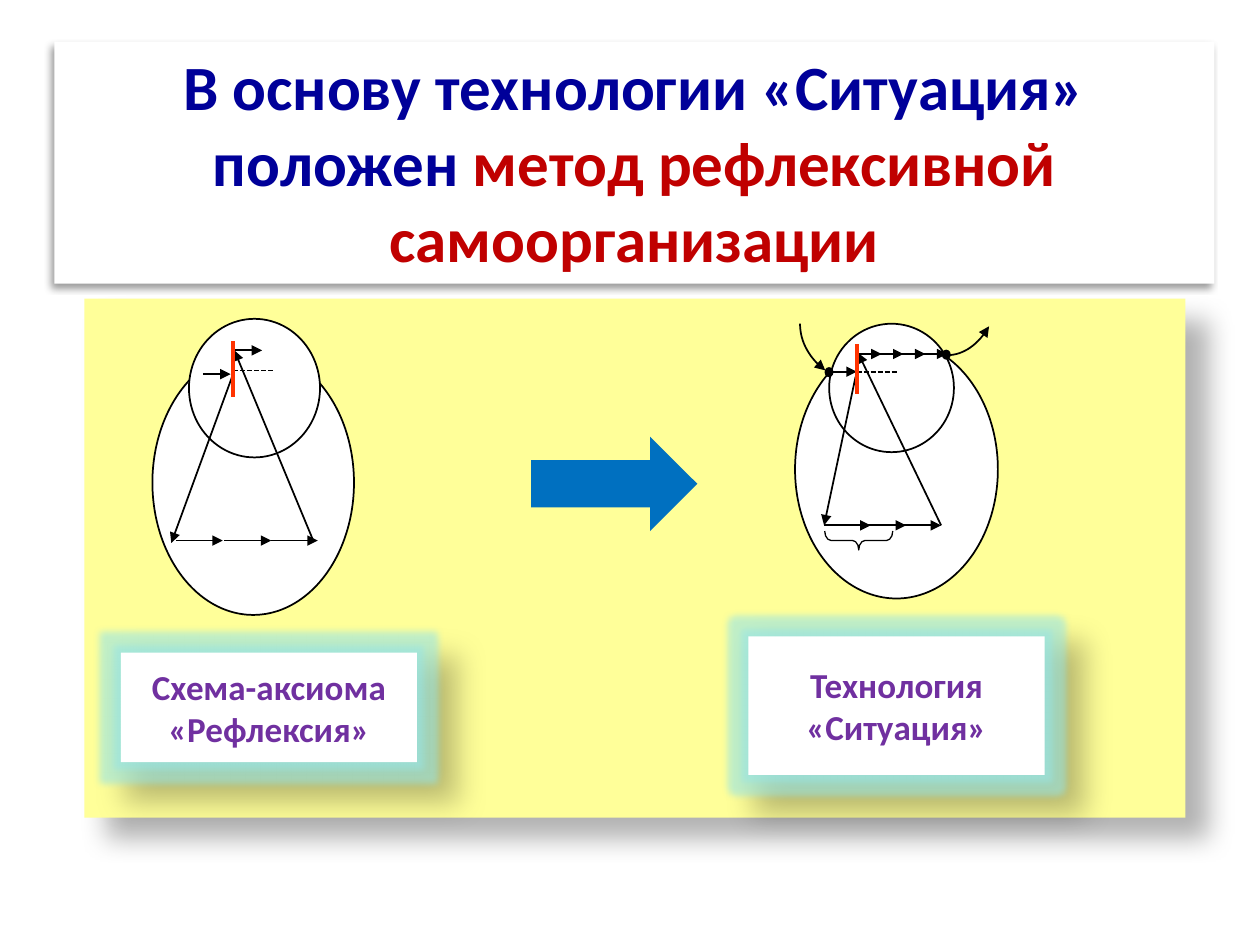
from lxml.etree import SubElement
from pptx import Presentation
from pptx.dml.color import RGBColor
from pptx.enum.dml import MSO_LINE
from pptx.enum.shapes import MSO_CONNECTOR, MSO_SHAPE
from pptx.enum.text import MSO_ANCHOR, MSO_AUTO_SIZE, PP_ALIGN
from pptx.oxml.ns import qn
from pptx.util import Pt

FONT = "Calibri"
BLACK = RGBColor(0x00, 0x00, 0x00)
WHITE = RGBColor(0xFF, 0xFF, 0xFF)
YELLOW = RGBColor(0xFF, 0xFF, 0x99)
BLUE = RGBColor(0x00, 0x70, 0xC0)
NAVY = RGBColor(0x00, 0x00, 0x99)
RED = RGBColor(0xC0, 0x00, 0x00)
ORANGE = RGBColor(0xFF, 0x33, 0x00)
PURPLE = RGBColor(0x70, 0x30, 0xA0)
GLOW = RGBColor(0x99, 0xE6, 0xE6)


def add_effect(sp, tag, color, alpha, **attrs):
    effects = sp._element.spPr.find(qn("a:effectLst"))
    effect = SubElement(effects, qn(tag), {k: str(v) for k, v in attrs.items()})
    clr = SubElement(effect, qn("a:srgbClr"), val=str(color))
    SubElement(clr, qn("a:alpha"), val=str(alpha * 1000))


def add_shadow(sp, alpha=30, blur=15, dist=18, angle=45):
    add_effect(sp, "a:outerShdw", BLACK, alpha, blurRad=Pt(blur), dist=Pt(dist),
               dir=angle * 60000, algn="ctr", rotWithShape=0)


def add_shape(shapes, kind, x, y, w, h, fill, line_width=None):
    sp = shapes.add_shape(kind, Pt(x), Pt(y), Pt(w), Pt(h))
    sp.shadow.inherit = False
    sp.fill.solid()
    sp.fill.fore_color.rgb = fill
    if line_width is None:
        sp.line.fill.background()
    else:
        sp.line.color.rgb = BLACK
        sp.line.width = Pt(line_width)
    return sp


def add_ellipse(shapes, x, y, w, h, fill=WHITE, line_width=1):
    return add_shape(shapes, MSO_SHAPE.OVAL, x, y, w, h, fill, line_width)


def add_arrowhead(line):
    SubElement(line._get_or_add_ln(), qn("a:tailEnd"), type="triangle")


def add_line(shapes, x1, y1, x2, y2, color=BLACK, width=1, dash=None):
    cn = shapes.add_connector(MSO_CONNECTOR.STRAIGHT, Pt(x1), Pt(y1), Pt(x2), Pt(y2))
    cn.line.color.rgb = color
    cn.line.width = Pt(width)
    if dash:
        cn.line.dash_style = dash
    SubElement(cn._element.spPr, qn("a:effectLst"))
    return cn


def add_arrow(shapes, x1, y1, x2, y2):
    add_arrowhead(add_line(shapes, x1, y1, x2, y2).line)


def add_curved_arrow(shapes, *controls, steps=16):
    """Draw an arrow along the cubic Bezier curve with four control points."""
    points = []
    for i in range(steps + 1):
        t = i / steps
        weights = ((1 - t) ** 3, 3 * t * (1 - t) ** 2, 3 * t * t * (1 - t), t ** 3)
        points.append(tuple(Pt(sum(w * c[axis] for w, c in zip(weights, controls)))
                            for axis in (0, 1)))
    builder = shapes.build_freeform(*points[0])
    builder.add_line_segments(points[1:], close=False)
    sp = builder.convert_to_shape()
    sp.shadow.inherit = False
    sp.fill.background()
    sp.line.color.rgb = BLACK
    sp.line.width = Pt(1)
    add_arrowhead(sp.line)


def add_barrier(shapes, x, top, bottom, dash_y, dash_length):
    """Draw the thick vertical bar and the dashed line that leaves it."""
    add_line(shapes, x, dash_y, x + dash_length, dash_y, dash=MSO_LINE.SQUARE_DOT)
    add_line(shapes, x, top, x, bottom, ORANGE, 2.25)


def format_run(r, size, color):
    r.font.name = FONT
    r.font.size = Pt(size)
    r.font.bold = True
    r.font.color.rgb = color


def add_title(slide):
    sp = slide.shapes.title
    sp.left, sp.top, sp.width, sp.height = Pt(31), Pt(23.8), Pt(663), Pt(138.2)
    sp.fill.solid()
    sp.fill.fore_color.rgb = WHITE
    sp.shadow.inherit = False
    add_shadow(sp, alpha=40, blur=4, dist=3, angle=135)
    tf = sp.text_frame
    tf.word_wrap = True
    tf.auto_size = MSO_AUTO_SIZE.SHAPE_TO_FIT_TEXT
    tf.vertical_anchor = MSO_ANCHOR.TOP
    p = tf.paragraphs[0]
    p.alignment = PP_ALIGN.CENTER
    for text, color in (("В основу технологии «Ситуация» положен ", NAVY),
                        ("метод рефлексивной самоорганизации", RED)):
        r = p.add_run()
        r.text = text
        format_run(r, 36, color)


def add_label(shapes, x, y, w, h, text):
    sp = add_shape(shapes, MSO_SHAPE.RECTANGLE, x, y, w, h, WHITE)
    add_effect(sp, "a:glow", GLOW, 60, rad=Pt(8))
    add_shadow(sp)
    tf = sp.text_frame
    tf.text = text
    tf.word_wrap = False
    tf.vertical_anchor = MSO_ANCHOR.MIDDLE
    for p in tf.paragraphs:
        p.alignment = PP_ALIGN.CENTER
        format_run(p.runs[0], 20, PURPLE)


def add_reflection_scheme(slide):
    shapes = slide.shapes.add_group_shape().shapes
    add_ellipse(shapes, 87.1, 200.2, 115.2, 151.2)
    add_ellipse(shapes, 108, 182.2, 74.9, 79.2)
    add_arrow(shapes, 115.9, 213.8, 131.8, 213.8)
    add_arrow(shapes, 133.2, 213.8, 97.9, 310.3)
    for x in (100.5, 128.2, 154.8):
        add_arrow(shapes, x, 308.9, x + 26.8, 308.9)
    add_arrow(shapes, 179.3, 309.6, 133.9, 200.2)
    add_arrow(shapes, 133.2, 200.2, 149.8, 200.2)
    add_barrier(shapes, 133.2, 195.1, 226.8, 211.7, 23)


def add_situation_scheme(slide):
    shapes = slide.shapes.add_group_shape().shapes
    add_curved_arrow(shapes, (541.4, 203), (550.8, 203), (559.4, 196.6), (565.2, 186.5))
    add_ellipse(shapes, 454.3, 194.4, 115.9, 147.6)
    add_ellipse(shapes, 473.8, 185, 71.3, 73.4)
    for x, y in ((538.6, 200.2), (471.6, 210.2)):
        add_ellipse(shapes, x, y, 4.3, 5, BLACK, 0.75)
    add_arrow(shapes, 475.9, 212.4, 489.6, 212.4)
    for x1, x2 in ((515.5, 537.8), (470.9, 497.5), (495.4, 517.7)):
        add_arrow(shapes, x1, 300.2, x2, 300.2)
    for i in range(4):
        x = 489.6 + 12.5 * i
        add_arrow(shapes, x, 202.3, x + 14.2, 202.3)
    brace = add_shape(shapes, MSO_SHAPE.RIGHT_BRACE, 485.3, 289.4, 10.8, 38.9, WHITE, 0.75)
    brace.adjustments[0] = 0.33
    brace.rotation = 90
    add_curved_arrow(shapes, (457.2, 185), (457.2, 195.8), (463, 205.2), (471.6, 211.7))
    add_arrow(shapes, 488.9, 215.3, 470.9, 300.2)
    add_arrow(shapes, 537.8, 300.2, 490.3, 201.6)
    add_barrier(shapes, 489.6, 196.6, 225.4, 212.4, 23)


def main():
    prs = Presentation()
    prs.slide_width, prs.slide_height = Pt(720), Pt(540)
    slide = prs.slides.add_slide(prs.slide_layouts[5])
    shapes = slide.shapes
    add_title(slide)
    panel = add_shape(shapes, MSO_SHAPE.RECTANGLE, 48.2, 170.6, 629.3, 296.6, YELLOW)
    add_shadow(panel)
    add_reflection_scheme(slide)
    add_situation_scheme(slide)
    add_label(shapes, 69.1, 373, 169.2, 62.6, "Схема-аксиома\n«Рефлексия»")
    add_label(shapes, 427.7, 363.6, 169.2, 79.2, "Технология\n«Ситуация»")
    add_shape(shapes, MSO_SHAPE.RIGHT_ARROW, 303.5, 249.5, 95, 54, BLUE)
    prs.save("out.pptx")


if __name__ == "__main__":
    main()
